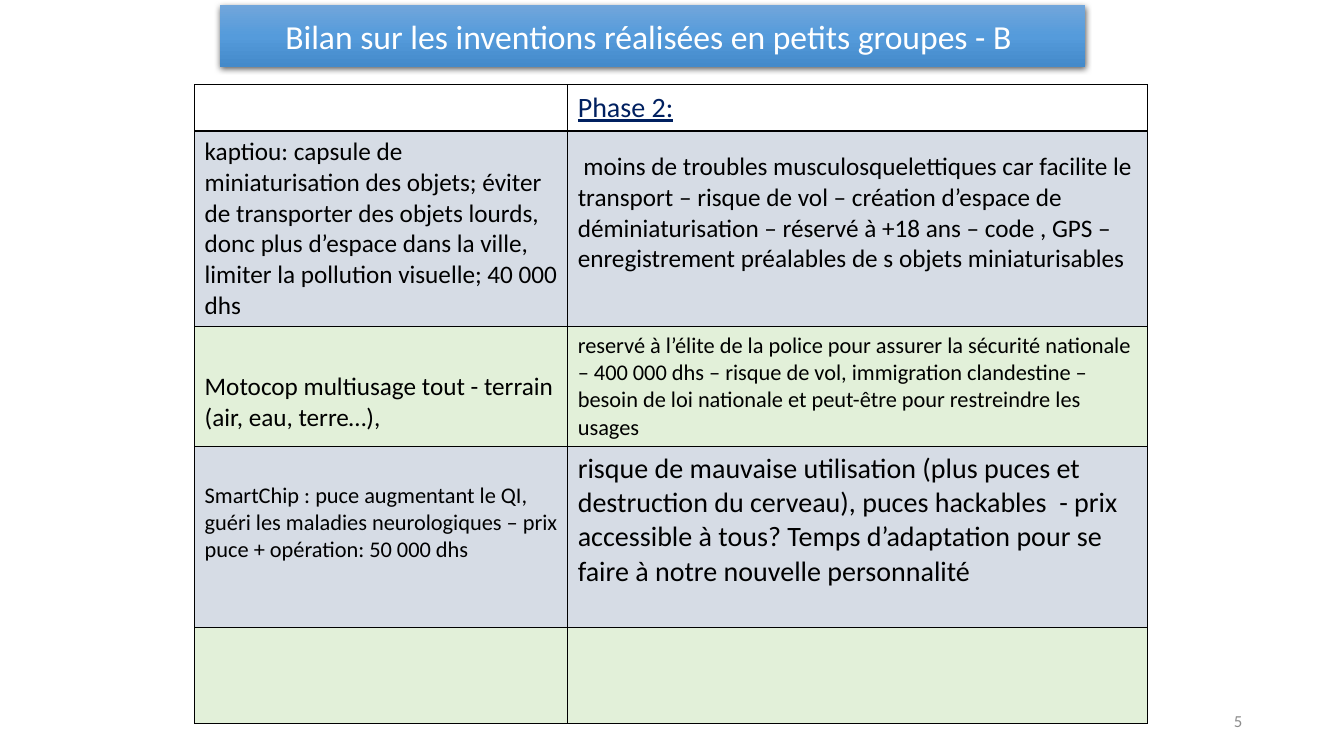
"""Build the slide that sums up the group inventions."""
from dataclasses import dataclass
from typing import Any

from lxml.etree import SubElement
from pptx import Presentation
from pptx.dml.color import RGBColor
from pptx.enum.text import MSO_ANCHOR, PP_ALIGN
from pptx.oxml import parse_xml
from pptx.oxml.ns import nsdecls, qn
from pptx.util import Emu, Inches, Pt

WIDE, HIGH = Inches(13.33), Inches(7.5)
WHITE = RGBColor(0xFF, 0xFF, 0xFF)
BLACK = RGBColor(0, 0, 0)
NAVY = RGBColor(0x00, 0x20, 0x60)
GREY = RGBColor(0x8C, 0x8C, 0x8C)
SLATE = RGBColor(0xD6, 0xDC, 0xE5)
GREEN = RGBColor(0xE2, 0xF0, 0xD9)
BLUES = {
    0: RGBColor(0x71, 0xA6, 0xDB),
    50000: RGBColor(0x55, 0x9B, 0xDB),
    100000: RGBColor(0x44, 0x8A, 0xCA),
}


@dataclass
class Box:
    """Place of an element, in percent of the slide."""
    left: float
    top: float
    width: float
    height: float


@dataclass
class Entry:
    """Text of a cell, with its format and extra inset in inches."""
    text: str = ""
    size: int = 18
    color: RGBColor = BLACK
    line: bool = False
    above: float = 0
    below: float = 0


@dataclass
class Row:
    """Height in percent of the slide, fill and cells of a row."""
    height: float
    fill: RGBColor
    cells: tuple[Entry, Entry]


TITLE = Box(16.35, 0.67, 64.37, 8.13)
PAGE = Box(70.67, 92.67, 22.5, 5.33)
GRID = Box(14.48, 11.2, 70.9, 84.92)
COLS = (27.76, 43.14)
ROWS = (
    Row(6.13, WHITE, (Entry(), Entry("Phase 2:", 20, NAVY, True))),
    Row(25.87, SLATE, (
        Entry("kaptiou: capsule de miniaturisation des objets; éviter de transporter des objets "
              "lourds, donc plus d’espace dans la ville, limiter la pollution visuelle; 40 000 dhs"),
        Entry(" moins de troubles musculosquelettiques car facilite le transport – risque de vol – "
              "création d’espace de déminiaturisation – réservé à +18 ans – code , GPS – "
              "enregistrement préalables de s objets miniaturisables", below=0.31))),
    Row(15.87, GREEN, (
        Entry("Motocop multiusage tout - terrain (air, eau, terre…),", above=0.31),
        Entry("reservé à l’élite de la police pour assurer la sécurité nationale – 400 000 dhs – "
              "risque de vol, immigration clandestine – besoin de loi nationale et peut-être pour "
              "restreindre les usages", 16))),
    Row(23.93, SLATE, (
        Entry("SmartChip : puce augmentant le QI, guéri les maladies neurologiques – prix puce + "
              "opération: 50 000 dhs", 16, below=0.28),
        Entry("risque de mauvaise utilisation (plus puces et destruction du cerveau), puces "
              "hackables  - prix accessible à tous? Temps d’adaptation pour se faire à notre "
              "nouvelle personnalité", 20, below=0.34))),
    Row(12.67, GREEN, (Entry(), Entry())),
)


def across(share: float) -> Emu:
    """Turn a percentage of the width into a length."""
    return Emu(round(WIDE * share / 100))


def down(share: float) -> Emu:
    """Turn a percentage of the height into a length."""
    return Emu(round(HIGH * share / 100))


def place(box: Box) -> dict[str, Emu]:
    """Give the lengths of a box by name."""
    return {"left": across(box.left), "top": down(box.top),
            "width": across(box.width), "height": down(box.height)}


def apply(item: Any, form: dict[str, Any]) -> None:
    """Set each named value on an object."""
    for name, value in form.items():
        setattr(item, name, value)


def write(frame: Any, text: str, size: int, color: RGBColor,
          align: PP_ALIGN = PP_ALIGN.LEFT, line: bool = False) -> None:
    """Put one formatted run into a text frame."""
    apply(frame, {"word_wrap": True, "vertical_anchor": MSO_ANCHOR.MIDDLE})
    para = frame.paragraphs[0]
    para.alignment = align
    run = para.add_run()
    run.text = text
    apply(run.font, {"name": "Calibri", "size": Pt(size), "bold": False, "underline": line})
    run.font.color.rgb = color


def gloss(shape: Any) -> None:
    """Give a shape the blue gradient and a soft shadow."""
    stops = "".join(f'<a:gs pos="{pos}"><a:srgbClr val="{tone}"/></a:gs>'
                    for pos, tone in BLUES.items())
    shape.fill.background()
    props = shape.fill._xPr
    props.replace(props.find(qn("a:noFill")), parse_xml(
        f'<a:gradFill {nsdecls("a")} rotWithShape="1"><a:gsLst>{stops}</a:gsLst>'
        '<a:lin ang="5400000" scaled="0"/></a:gradFill>'))
    shape.line.fill.background()
    props.append(parse_xml(
        f'<a:effectLst {nsdecls("a")}><a:outerShdw blurRad="{Pt(4.5)}" dist="{Pt(1.5)}" '
        'dir="5400000" algn="ctr" rotWithShape="0"><a:srgbClr val="000000">'
        '<a:alpha val="63000"/></a:srgbClr></a:outerShdw></a:effectLst>'))


def border(cell: Any) -> None:
    """Draw a thin black line on each side of a cell."""
    props = cell._tc.get_or_add_tcPr()
    for spot, side in enumerate(("lnL", "lnR", "lnT", "lnB")):
        edge = SubElement(props, qn(f"a:{side}"), w=str(Pt(1)))
        fill = SubElement(edge, qn("a:solidFill"))
        SubElement(fill, qn("a:srgbClr"), val=str(BLACK))
        props.insert(spot, edge)


def paint(cell: Any, entry: Entry, fill: RGBColor) -> None:
    """Fill, frame and write one cell."""
    cell.fill.solid()
    cell.fill.fore_color.rgb = fill
    border(cell)
    apply(cell, {"vertical_anchor": MSO_ANCHOR.MIDDLE,
                 "margin_top": Inches(0.05 + entry.above),
                 "margin_bottom": Inches(0.05 + entry.below)})
    if entry.text:
        write(cell.text_frame, entry.text, entry.size, entry.color, line=entry.line)


def tabulate(slide: Any) -> None:
    """Add the table of inventions."""
    table = slide.shapes.add_table(len(ROWS), len(COLS), **place(GRID)).table
    apply(table, {"first_row": False, "horz_banding": False})
    for col, share in zip(table.columns, COLS):
        col.width = across(share)
    for line, row in zip(table.rows, ROWS):
        line.height = down(row.height)
        for cell, entry in zip(line.cells, row.cells):
            paint(cell, entry, row.fill)


def main() -> None:
    """Build and save the slide."""
    deck = Presentation()
    apply(deck, {"slide_width": WIDE, "slide_height": HIGH})
    slide = deck.slides.add_slide(deck.slide_layouts[5])
    title = slide.shapes.title
    apply(title, place(TITLE))
    gloss(title)
    write(title.text_frame, "Bilan sur les inventions réalisées en petits groupes - B ",
          24, WHITE, PP_ALIGN.CENTER)
    page = slide.shapes.add_textbox(**place(PAGE))
    write(page.text_frame, "5", 12, GREY, PP_ALIGN.RIGHT)
    tabulate(slide)
    deck.save("out.pptx")


if __name__ == "__main__":
    main()
